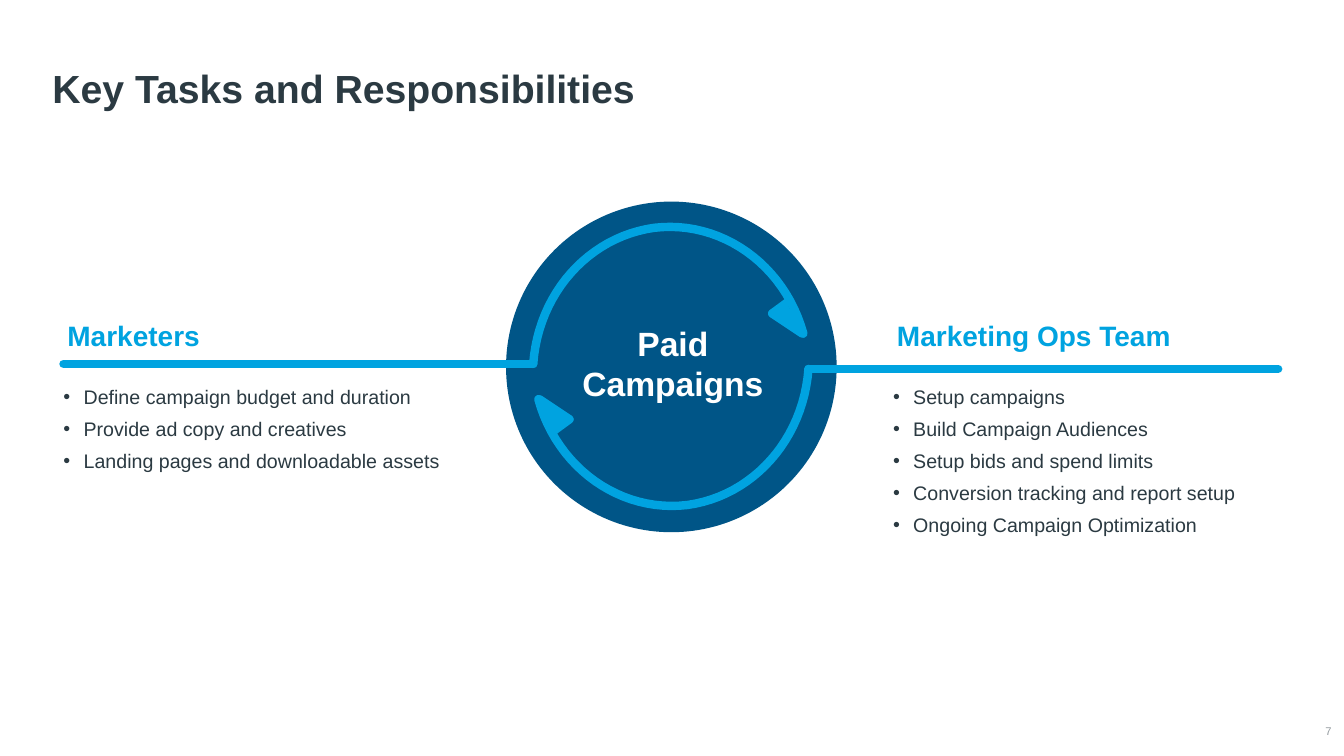
from dataclasses import dataclass

from lxml import etree
from pptx import Presentation
from pptx import util as u
from pptx.dml import color
from pptx.enum import shapes, text
from pptx.oxml import ns


@dataclass(frozen=True)
class Theme:
    font: str = "Arial"
    ink: str = "2B3A42"
    navy: str = "005587"
    sky: str = "00A3E0"
    grey: str = "959CA0"
    white: str = "FFFFFF"
    title: int = 28
    hub: int = 24
    head: int = 20
    body: int = 14
    small: int = 8
    stroke: int = 6


class Deck:
    """Draws elements on one slide, placed on a grid of tenth-inch cells."""

    cell = u.Inches(0.1)
    cols, rows = 133.33, 75
    centre = (66.55, 36.35)

    def __init__(self, theme):
        self.theme = theme
        self.prs = Presentation()
        self.prs.slide_width = self.grid(self.cols)
        self.prs.slide_height = self.grid(self.rows)
        self.s = self.prs.slides.add_slide(self.prs.slide_layouts[5])

    def grid(self, cells):
        return u.Emu(round(cells * self.cell))

    def box(self, *cells):
        return [self.grid(c) for c in cells]

    def rgb(self, name):
        return color.RGBColor.from_string(getattr(self.theme, name))

    def turn(self, point, half_turn):
        if not half_turn:
            return point
        return tuple(2 * c - v for c, v in zip(self.centre, point))

    def assign(self, target, values):
        for name, value in values.items():
            setattr(target, name, value)

    def fill_text(self, tf, lines, size, ink, bold=False, anchor="TOP", align="LEFT",
                  inset=True, bullets=False, **paragraph):
        self.assign(tf, {"word_wrap": True, "auto_size": text.MSO_AUTO_SIZE.NONE,
                         "vertical_anchor": text.MSO_ANCHOR[anchor]})
        if not inset:
            self.assign(tf, dict.fromkeys(
                ("margin_left", "margin_top", "margin_right", "margin_bottom"), 0))
        for i, line in enumerate(lines):
            p = tf.add_paragraph() if i else tf.paragraphs[0]
            if bullets:
                self.bullet(p)
            self.assign(p, {"alignment": text.PP_ALIGN[align], **paragraph})
            r = p.add_run()
            r.text = line
            self.assign(r.font, {"name": self.theme.font, "bold": bold,
                                 "size": u.Pt(getattr(self.theme, size))})
            r.font.color.rgb = self.rgb(ink)

    def bullet(self, p):
        pPr = p._p.get_or_add_pPr()
        indent = self.grid(2)
        pPr.set("marL", str(indent))
        pPr.set("indent", str(-indent))
        etree.SubElement(pPr, ns.qn("a:buFont")).set("typeface", self.theme.font)
        etree.SubElement(pPr, ns.qn("a:buChar")).set("char", "•")

    def title(self, place, words):
        sp = self.s.shapes.title
        self.assign(sp, dict(zip(("left", "top", "width", "height"), self.box(*place))))
        self.fill_text(sp.text_frame, [words], "title", "ink", True, "BOTTOM",
                       line_spacing=0.9)

    def label(self, place, lines, size, ink, **style):
        sp = self.s.shapes.add_textbox(*self.box(*place))
        self.fill_text(sp.text_frame, lines, size, ink, **style)

    def shape(self, kind, place, fill):
        sp = self.s.shapes.add_shape(shapes.MSO_SHAPE[kind], *self.box(*place))
        sp.shadow.inherit = False
        sp.fill.solid()
        sp.fill.fore_color.rgb = self.rgb(fill)
        sp.line.fill.background()
        return sp

    def stroke(self, sp):
        sp.line.color.rgb = self.rgb("sky")
        sp.line.width = u.Pt(self.theme.stroke)
        ln = sp.line._get_or_add_ln()
        ln.set("cap", "rnd")
        etree.SubElement(ln, ns.qn("a:round"))

    def line(self, start, end):
        sp = self.s.shapes.add_connector(shapes.MSO_CONNECTOR.STRAIGHT,
                                         *self.box(*start, *end))
        self.stroke(sp)
        etree.SubElement(sp._element.spPr, ns.qn("a:effectLst"))

    def curve(self, start, beziers, steps=24):
        points = [start]
        for a, b, end in beziers:
            first = points[-1]
            for i in range(1, steps + 1):
                t = i / steps
                weights = ((1 - t) ** 3, 3 * t * (1 - t) ** 2, 3 * t * t * (1 - t), t ** 3)
                points.append(tuple(sum(w * v for w, v in zip(weights, axis))
                                    for axis in zip(first, a, b, end)))
        fb = self.s.shapes.build_freeform(*self.box(*points[0]))
        fb.add_line_segments([self.box(*pt) for pt in points[1:]], close=False)
        sp = fb.convert_to_shape()
        sp.shadow.inherit = False
        sp.fill.background()
        self.stroke(sp)

    def cycle_arrow(self, half_turn):
        def at(x, y):
            return self.turn((x, y), half_turn)

        width, height = 1.8, 3.3
        x, y = at(54.8, 40.85)
        head = self.shape("ISOSCELES_TRIANGLE",
                          (x - width / 2, y - height / 2, width, height), "sky")
        head.adjustments[0] = 0.25
        head.rotation = 321.8 - 180 * half_turn
        self.line(at(126.8, 36.6), at(80.2, 36.6))
        self.curve(at(80.2, 36.6), [
            (at(79.7, 43.6), at(74.7, 49.2), at(68.2, 50.1)),
            (at(61.6, 50.9), at(55.3, 46.5), at(53.4, 39.6)),
        ])
        barb = at(56.5, 41.6)
        self.line(at(53.5, 39.6), barb)
        self.line(at(55, 42.7), barb)

    def team(self, left, name, tasks):
        self.label((left, 28.3, 38.3, 7.1), [name], "head", "sky",
                   bold=True, anchor="BOTTOM")
        self.label((left + 0.6, 38.2, 38.4, 20.8), tasks, "body", "ink",
                   inset=False, bullets=True, space_after=u.Pt(6))


def main():
    d = Deck(Theme())
    d.title((4.2, 3.2, 124, 8.4), "Key Tasks and Responsibilities")
    d.label((128.2, 71.6, 3.9, 1.9), ["7"], "small", "grey",
            anchor="MIDDLE", align="RIGHT", inset=False)
    d.shape("OVAL", (50.2, 20, 32.8, 32.8), "navy")
    d.label((56.5, 28.3, 20.5, 15.4), ["Paid Campaigns"], "hub", "white",
            bold=True, anchor="MIDDLE", align="CENTER")
    d.team(5.7, "Marketers", [
        "Define campaign budget and duration",
        "Provide ad copy and creatives",
        "Landing pages and downloadable assets",
    ])
    d.team(88, "Marketing Ops Team", [
        "Setup campaigns",
        "Build Campaign Audiences",
        "Setup bids and spend limits",
        "Conversion tracking and report setup",
        "Ongoing Campaign Optimization",
    ])
    for half_turn in (False, True):
        d.cycle_arrow(half_turn)
    d.prs.save("out.pptx")


if __name__ == "__main__":
    main()
